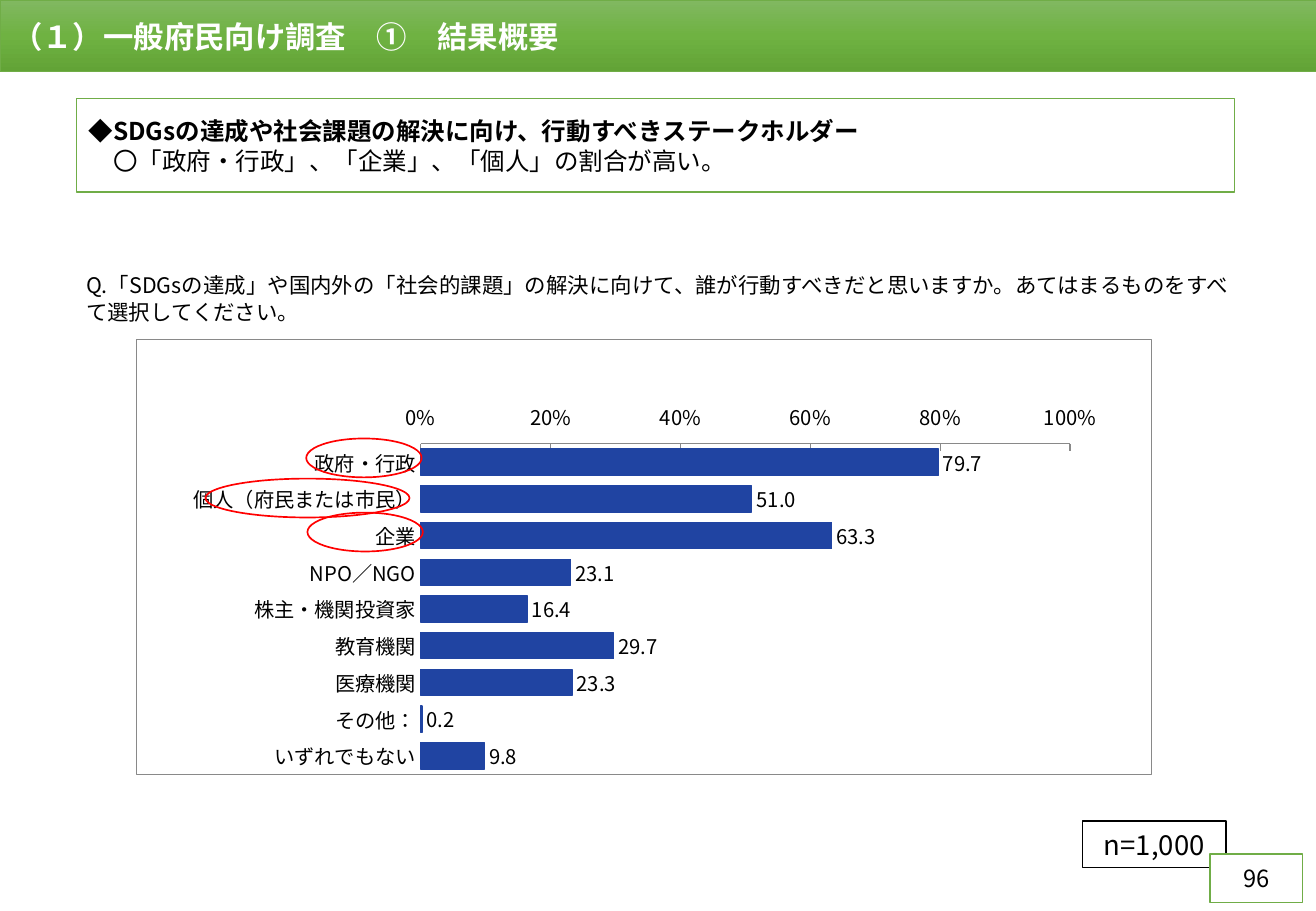
import copy
import dataclasses
import typing

import pptx
import pptx.chart.data
import pptx.dml.color
import pptx.enum.chart
import pptx.enum.dml
import pptx.enum.shapes
import pptx.enum.text
import pptx.oxml
import pptx.oxml.ns
import pptx.util

EMU_PER_PX = 9144
ALIGN = pptx.enum.text.PP_ALIGN
ANCHOR = pptx.enum.text.MSO_ANCHOR
AUTO_SIZE = pptx.enum.text.MSO_AUTO_SIZE
SHAPE = pptx.enum.shapes.MSO_SHAPE


@dataclasses.dataclass(frozen=True)
class Theme:
    font: str = "Noto Sans CJK JP"
    white: str = "FFFFFF"
    black: str = "000000"
    green: str = "70AD47"
    banner: tuple[str, ...] = ("81B861", "6FB242", "62A336")
    bar: str = "2044A2"
    gray: str = "898989"
    red: str = "FF0000"
    title_size: float = 18
    finding_size: float = 14.5
    question_size: float = 12.7
    chart_size: float = 12
    sample_size: float = 16.3
    page_size: float = 14
    line_height: float = 1.22


class Box(typing.NamedTuple):
    left: int
    top: int
    width: int
    height: int


class Answer(typing.NamedTuple):
    label: str
    percent: float


THEME = Theme()
SLIDE_BOX = Box(0, 0, 1083, 750)
TITLE_BOX = Box(0, 0, 1083, 59)
FINDING_BOX = Box(63, 81, 953, 77)
QUESTION_BOX = Box(61, 219, 972, 31)
CHART_BOX = Box(112, 279, 836, 359)
SAMPLE_BOX = Box(891, 676, 118, 38)
PAGE_BOX = Box(996, 703, 76, 40)
HIGHLIGHTS = (Box(169, 394, 168, 32), Box(252, 361, 95, 32), Box(253, 422, 95, 32))
PLOT_LAYOUT = {"x": 0.28, "y": 0.24, "w": 0.64, "h": 0.76}
ANSWERS = (
    Answer("政府・行政", 79.7),
    Answer("個人（府民または市民）", 51.0),
    Answer("企業", 63.3),
    Answer("NPO／NGO", 23.1),
    Answer("株主・機関投資家", 16.4),
    Answer("教育機関", 29.7),
    Answer("医療機関", 23.3),
    Answer("その他：", 0.2),
    Answer("いずれでもない", 9.8),
)


def rgb(color: str) -> pptx.dml.color.RGBColor:
    return pptx.dml.color.RGBColor.from_string(color)


def emu(box: Box) -> list[pptx.util.Emu]:
    return [pptx.util.Emu(length * EMU_PER_PX) for length in box]


def move(shape, box: Box) -> None:
    shape.left, shape.top, shape.width, shape.height = emu(box)


def set_line(line, color: str, width: float) -> None:
    line.color.rgb = rgb(color)
    line.width = pptx.util.Pt(width)


def style_shape(shape, *, fill: str | None, line: str, width: float) -> None:
    shape.shadow.inherit = False
    if fill:
        shape.fill.solid()
        shape.fill.fore_color.rgb = rgb(fill)
    else:
        shape.fill.background()
    set_line(shape.line, line, width)


def add_outline(slide, preset, box: Box, *, fill: str | None = None, line: str, width: float):
    shape = slide.shapes.add_shape(preset, *emu(box))
    style_shape(shape, fill=fill, line=line, width=width)
    return shape


def set_frame(shape, *, anchor=ANCHOR.MIDDLE, auto_size=AUTO_SIZE.NONE):
    frame = shape.text_frame
    frame.word_wrap = True
    frame.auto_size = auto_size
    frame.vertical_anchor = anchor
    return frame


def add_east_asian_font(properties) -> None:
    pptx.oxml.parse_xml(f'<a:x {pptx.oxml.ns.nsdecls("a")}/>')
    east_asian = properties.makeelement(pptx.oxml.ns.qn("a:ea"), {"typeface": THEME.font})
    properties.find(pptx.oxml.ns.qn("a:latin")).addnext(east_asian)


def write_text(paragraph, text: str, *, size: float, color: str = THEME.black,
               bold: bool = False, alignment=ALIGN.LEFT) -> None:
    paragraph.alignment = alignment
    paragraph.space_before = pptx.util.Pt(0)
    paragraph.line_spacing = pptx.util.Pt(round(size * THEME.line_height, 1))
    run = paragraph.add_run()
    run.text = text
    run.font.name = THEME.font
    run.font.size = pptx.util.Pt(size)
    run.font.bold = bold
    run.font.color.rgb = rgb(color)
    add_east_asian_font(run.font._element)


def build_title(slide) -> None:
    title = slide.shapes.title
    move(title, TITLE_BOX)
    style_shape(title, fill=THEME.white, line=THEME.green, width=0.5)
    title.fill.gradient()
    title.fill.gradient_angle = 270
    stop_list = title.element.find(".//" + pptx.oxml.ns.qn("a:gsLst"))
    stop_list.append(copy.deepcopy(stop_list[0]))
    for index, (stop, color) in enumerate(zip(title.fill.gradient_stops, THEME.banner)):
        stop.position = index / 2
        stop.color.rgb = rgb(color)
    write_text(set_frame(title).paragraphs[0], "（１）一般府民向け調査　①　結果概要",
               size=THEME.title_size, color=THEME.white, bold=True)


def build_findings(slide) -> None:
    body = slide.placeholders[1]
    move(body, FINDING_BOX)
    style_shape(body, fill=THEME.white, line=THEME.green, width=1)
    frame = set_frame(body)
    heading, finding = frame.paragraphs[0], frame.add_paragraph()
    write_text(heading, "◆SDGsの達成や社会課題の解決に向け、行動すべきステークホルダー",
               size=THEME.finding_size, bold=True)
    write_text(finding, "　〇「政府・行政」、「企業」、「個人」の割合が高い。", size=THEME.finding_size)
    for paragraph in frame.paragraphs:
        properties = paragraph._p.get_or_add_pPr()
        properties.set("marL", "0")
        properties.set("indent", "0")
        properties.append(properties.makeelement(pptx.oxml.ns.qn("a:buNone"), {}))


def build_question(slide) -> None:
    question = slide.shapes.add_textbox(*emu(QUESTION_BOX))
    frame = set_frame(question, anchor=ANCHOR.TOP, auto_size=AUTO_SIZE.SHAPE_TO_FIT_TEXT)
    write_text(frame.paragraphs[0],
               "Q.「SDGsの達成」や国内外の「社会的課題」の解決に向けて、"
               "誰が行動すべきだと思いますか。あてはまるものをすべて選択してください。",
               size=THEME.question_size)


def frame_chart(chart) -> None:
    area = pptx.oxml.parse_xml(
        f'<c:spPr {pptx.oxml.ns.nsdecls("c", "a")}>'
        f'<a:solidFill><a:srgbClr val="{THEME.white}"/></a:solidFill>'
        f'<a:ln w="9525"><a:solidFill><a:srgbClr val="{THEME.gray}"/></a:solidFill></a:ln></c:spPr>')
    chart.element.find(pptx.oxml.ns.qn("c:chart")).addnext(area)
    modes = "".join(f'<c:{name}Mode val="edge"/>' for name in "xy")
    lengths = "".join(f'<c:{name} val="{value}"/>' for name, value in PLOT_LAYOUT.items())
    layout = pptx.oxml.parse_xml(
        f'<c:layout {pptx.oxml.ns.nsdecls("c")}><c:manualLayout>'
        f'<c:layoutTarget val="inner"/>{modes}{lengths}</c:manualLayout></c:layout>')
    plot_area = chart.element.find(".//" + pptx.oxml.ns.qn("c:plotArea"))
    for default_layout in plot_area.findall(pptx.oxml.ns.qn("c:layout")):
        plot_area.remove(default_layout)
    plot_area.insert(0, layout)


def build_chart(slide) -> None:
    data = pptx.chart.data.CategoryChartData(number_format="0.0")
    data.categories = [answer.label for answer in ANSWERS]
    data.add_series("Series 1", [answer.percent for answer in ANSWERS])
    chart = slide.shapes.add_chart(
        pptx.enum.chart.XL_CHART_TYPE.BAR_CLUSTERED, *emu(CHART_BOX), data).chart
    chart.has_legend = False
    chart.has_title = False
    chart.font.name = THEME.font
    chart.font.size = pptx.util.Pt(THEME.chart_size)
    chart.font.color.rgb = rgb(THEME.black)
    add_east_asian_font(chart.font._element)
    frame_chart(chart)

    category_axis, value_axis = chart.category_axis, chart.value_axis
    for axis in (category_axis, value_axis):
        axis.major_tick_mark = pptx.enum.chart.XL_TICK_MARK.INSIDE
        axis.minor_tick_mark = pptx.enum.chart.XL_TICK_MARK.NONE
        axis.has_major_gridlines = False
    category_axis.reverse_order = True
    category_axis.format.line.fill.background()
    value_axis.minimum_scale, value_axis.maximum_scale, value_axis.major_unit = 0, 100, 20
    value_axis.tick_label_position = pptx.enum.chart.XL_TICK_LABEL_POSITION.LOW
    value_axis.tick_labels.number_format = '0"%"'
    value_axis.tick_labels.number_format_is_linked = False
    set_line(value_axis.format.line, THEME.gray, 0.75)

    plot = chart.plots[0]
    plot.gap_width = 40
    plot.vary_by_categories = False
    plot.has_data_labels = True
    labels = plot.data_labels
    labels.show_value = True
    labels.position = pptx.enum.chart.XL_LABEL_POSITION.OUTSIDE_END
    labels.number_format = "0.0"
    labels.number_format_is_linked = False
    bars = plot.series[0].format
    bars.fill.solid()
    bars.fill.fore_color.rgb = rgb(THEME.bar)
    set_line(bars.line, THEME.bar, 0.75)


def build_notes(slide) -> None:
    for box in HIGHLIGHTS:
        add_outline(slide, SHAPE.OVAL, box, line=THEME.red, width=1)
    sample = add_outline(slide, SHAPE.RECTANGLE, SAMPLE_BOX, line=THEME.black, width=0.75)
    write_text(set_frame(sample, anchor=ANCHOR.TOP).paragraphs[0], "n=1,000",
               size=THEME.sample_size, alignment=ALIGN.CENTER)
    page = add_outline(slide, SHAPE.RECTANGLE, PAGE_BOX, fill=THEME.white, line=THEME.green, width=1)
    write_text(set_frame(page).paragraphs[0], "96", size=THEME.page_size, alignment=ALIGN.CENTER)


def main() -> None:
    presentation = pptx.Presentation()
    presentation.slide_width, presentation.slide_height = emu(SLIDE_BOX)[2:]
    slide = presentation.slides.add_slide(presentation.slide_layouts[1])
    for build in (build_title, build_findings, build_question, build_chart, build_notes):
        build(slide)
    presentation.save("out.pptx")


if __name__ == "__main__":
    main()
